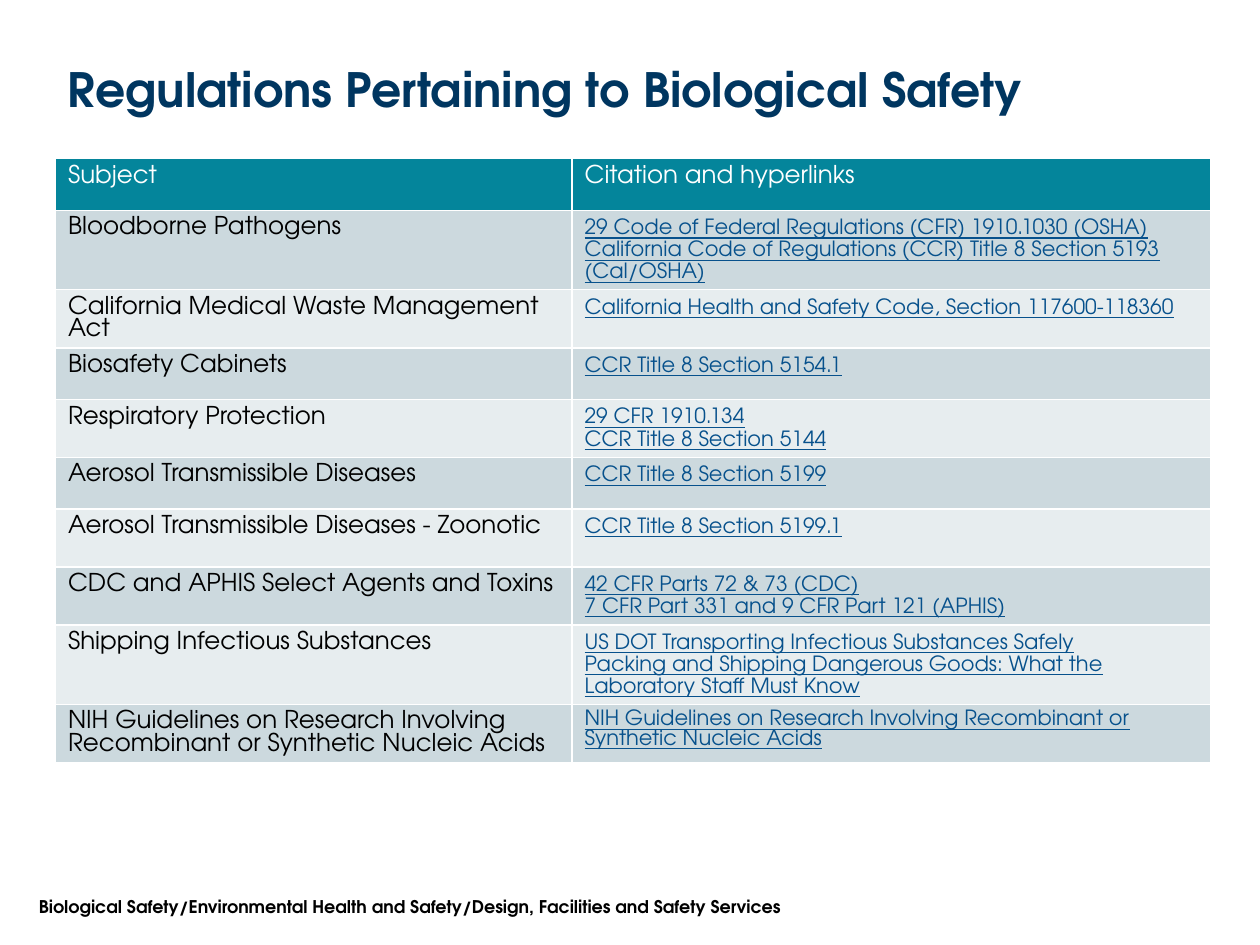
from lxml.etree import SubElement
from pptx import Presentation
from pptx.dml.color import RGBColor
from pptx.enum.text import MSO_ANCHOR
from pptx.oxml.ns import qn
from pptx.util import Inches, Pt

FONT = "TeX Gyre Adventor"
WHITE, BLACK, NAVY, LINK = "FFFFFF", "000000", "003660", "07518C"
HEADER_FILL, BAND_FILLS = "04859B", ("CCD9DE", "E7EDEF")

TITLE = "Regulations Pertaining to Biological Safety"
FOOTER = ("Biological Safety/Environmental Health and Safety/"
          "Design, Facilities and Safety Services")
HEADINGS = ("Subject", "Citation and hyperlinks")
NIH_GUIDELINES = ("NIH Guidelines on Research Involving "
                  "Recombinant or Synthetic Nucleic Acids")
# Lines of height, subject, citations
REGULATIONS = [
    (3, "Bloodborne Pathogens",
     ["29 Code of Federal Regulations (CFR) 1910.1030 (OSHA)",
      "California Code of Regulations (CCR) Title 8 Section 5193 (Cal/OSHA)"]),
    (2, "California Medical Waste Management Act",
     ["California Health and Safety Code, Section 117600-118360"]),
    (1, "Biosafety Cabinets", ["CCR Title 8 Section 5154.1"]),
    (2, "Respiratory Protection", ["29 CFR 1910.134", "CCR Title 8 Section 5144"]),
    (1, "Aerosol Transmissible Diseases", ["CCR Title 8 Section 5199"]),
    (2, "Aerosol Transmissible Diseases - Zoonotic", ["CCR Title 8 Section 5199.1"]),
    (2, "CDC and APHIS Select Agents and Toxins",
     ["42 CFR Parts 72 & 73 (CDC)", "7 CFR Part 331 and 9 CFR Part 121 (APHIS)"]),
    (3, "Shipping Infectious Substances",
     ["US DOT Transporting Infectious Substances Safely",
      "Packing and Shipping Dangerous Goods: What the Laboratory Staff Must Know"]),
    (2, NIH_GUIDELINES, [NIH_GUIDELINES]),
]
COLUMN_WIDTHS = (4.1, 5.07)
ROW_HEIGHTS = {1: 0.41, 2: 0.46, 3: 0.63}
SUBJECT_LEADING, CITATION_LEADING, TIGHT_LEADING = Pt(13), Pt(12.6), Pt(11)


def color(hex_value):
    return RGBColor.from_string(hex_value)


def write(frame, lines, size, hex_value, bold=False, underline=False, spacing=None):
    frame.text = "\n".join(lines)
    for paragraph in frame.paragraphs:
        if spacing:
            paragraph.line_spacing = spacing
        for run in paragraph.runs:
            font = run.font
            font.name, font.size = FONT, Pt(size)
            font.bold, font.underline = bold, underline
            font.color.rgb = color(hex_value)


def add_label(slide, box, text, size, hex_value, spacing=None):
    label = slide.shapes.add_textbox(*map(Inches, box))
    frame = label.text_frame
    frame.word_wrap = True
    frame.vertical_anchor = MSO_ANCHOR.MIDDLE
    write(frame, [text], size, hex_value, bold=True, spacing=spacing)


def paint(cell, fill):
    """Give a cell white borders and a solid fill."""
    properties = cell._tc.get_or_add_tcPr()
    for side in "LRTB":
        border = SubElement(properties, qn(f"a:ln{side}"), w=str(Pt(1)))
        SubElement(SubElement(border, qn("a:solidFill")), qn("a:srgbClr"), val=WHITE)
    cell.fill.solid()
    cell.fill.fore_color.rgb = color(fill)


def add_regulations(slide):
    heights = [ROW_HEIGHTS[1]] + [ROW_HEIGHTS[lines] for lines, _, _ in REGULATIONS]
    table = slide.shapes.add_table(
        len(heights), len(HEADINGS), Inches(0.44), Inches(1.26),
        Inches(sum(COLUMN_WIDTHS)), Inches(sum(heights))).table
    for column, width in zip(table.columns, COLUMN_WIDTHS):
        column.width = Inches(width)
    for row, height in zip(table.rows, heights):
        row.height = Inches(height)

    for column, heading in enumerate(HEADINGS):
        cell = table.cell(0, column)
        write(cell.text_frame, [heading], 14, WHITE, spacing=SUBJECT_LEADING)
        paint(cell, HEADER_FILL)

    for row, (_, subject, citations) in enumerate(REGULATIONS, 1):
        subject_cell, citation_cell = table.cell(row, 0), table.cell(row, 1)
        leading = TIGHT_LEADING if subject == NIH_GUIDELINES else CITATION_LEADING
        write(subject_cell.text_frame, [subject], 14, BLACK, spacing=SUBJECT_LEADING)
        write(citation_cell.text_frame, citations, 12, LINK, underline=True,
              spacing=leading)
        for cell in (subject_cell, citation_cell):
            paint(cell, BAND_FILLS[(row - 1) % 2])


def main():
    deck = Presentation()
    deck.slide_width, deck.slide_height = Inches(10), Inches(7.5)
    slide = deck.slides.add_slide(deck.slide_layouts[6])
    add_label(slide, (0.21, 7.06, 6.46, 0.27), FOOTER, 10, BLACK)
    add_label(slide, (0.44, 0.48, 9.11, 0.51), TITLE, 27, NAVY, spacing=0.9)
    add_regulations(slide)
    deck.save("out.pptx")


if __name__ == "__main__":
    main()
